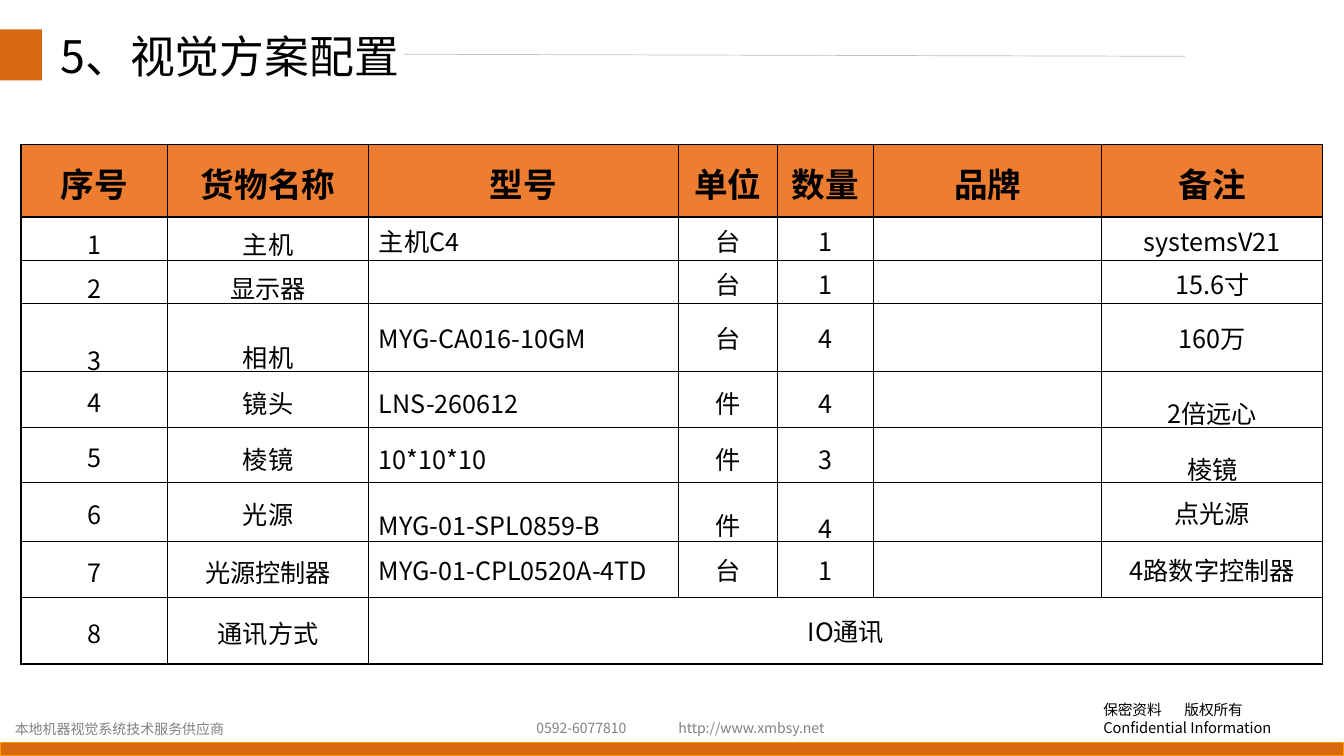
"""Build the vision equipment list slide."""
from lxml import etree
from pptx import Presentation
from pptx.dml.color import RGBColor
from pptx.enum.shapes import MSO_CONNECTOR, MSO_SHAPE
from pptx.enum.text import MSO_ANCHOR, MSO_AUTO_SIZE, PP_ALIGN
from pptx.oxml.ns import qn
from pptx.util import Pt

RECT, LINE = MSO_SHAPE.RECTANGLE, MSO_CONNECTOR.STRAIGHT
LEFT, MID = PP_ALIGN.LEFT, PP_ALIGN.CENTER
TOP, HALF = MSO_ANCHOR.TOP, MSO_ANCHOR.MIDDLE
FIXED = MSO_AUTO_SIZE.NONE
FACE = "Noto Sans CJK SC"


def color(code):
    return RGBColor.from_string(code)


def style(para, size, code, bold=False):
    for run in para.runs:
        font = run.font
        font.size, font.bold, font.name = Pt(size), bold, FACE
        font.color.rgb = color(code)
        east = etree.SubElement(run._r.get_or_add_rPr(), qn("a:ea"))
        east.set("typeface", FACE)


prs = Presentation()
prs.slide_width, prs.slide_height = Pt(960), Pt(540)
slide = prs.slides.add_slide(prs.slide_layouts[5])
shapes = slide.shapes

bars = [(0, 21, 30, 36.5, None), (0, 530.5, 960, 9.5, "FF9900")]
for x, y, w, h, edge in bars:
    bar = shapes.add_shape(RECT, Pt(x), Pt(y), Pt(w), Pt(h))
    bar.shadow.inherit = False
    bar.fill.solid()
    bar.fill.fore_color.rgb = color("D6680F")
    if edge:
        bar.line.color.rgb = color(edge)
        bar.line.width = Pt(1)
    else:
        bar.line.fill.background()

notes = [
    (781, 497, 160, 10.5, "000000", "保密资料\t版权所有\nConfidential Information"),
    (477.5, 510.5, 130, 10, "808080", "http://www.xmbsy.net"),
    (376, 510.5, 90, 10, "808080", "0592-6077810"),
    (3.5, 511, 169, 10, "808080", "本地机器视觉系统技术服务供应商"),
]
for x, y, w, size, code, text in notes:
    lines = text.split("\n")
    box = shapes.add_textbox(Pt(x), Pt(y), Pt(w), Pt(7 + 12.5 * len(lines)))
    frame = box.text_frame
    frame.word_wrap = True
    frame.text = text
    for para in frame.paragraphs:
        if "\t" in para.text:
            tabs = etree.SubElement(para._p.get_or_add_pPr(), qn("a:tabLst"))
            etree.SubElement(tabs, qn("a:tab"), pos=str(Pt(58)), algn="l")
        style(para, size, code)

rule = shapes.add_connector(LINE, Pt(288.5), Pt(38.75), Pt(846.5), Pt(40.25))
rule.line.color.rgb = color("BFBFBF")
rule.line.width = Pt(0.5)
etree.SubElement(rule._element.spPr, qn("a:effectLst"))

title = shapes.title
title.left, title.top, title.width, title.height = Pt(36), Pt(21), Pt(276), Pt(51)
frame = title.text_frame
frame.text = "5、视觉方案配置"
frame.auto_size, frame.vertical_anchor = FIXED, TOP
para = frame.paragraphs[0]
para.alignment, para.line_spacing = LEFT, 0.9
style(para, 32, "000000")

wides = [104.5, 144, 221, 71, 68.5, 163, 158]
highs = [52, 31, 31, 48, 40, 39.5, 42, 40, 47.5]
goods = [
    ["序号", "货物名称", "型号", "单位", "数量", "品牌", "备注"],
    ["1", "主机", "主机C4", "台", "1", "", "systemsV21"],
    ["2", "显示器", "", "台", "1", "", "15.6寸"],
    ["3", "相机", "MYG-CA016-10GM", "台", "4", "", "160万"],
    ["4", "镜头", "LNS-260612", "件", "4", "", "2倍远心"],
    ["5", "棱镜", "10*10*10", "件", "3", "", "棱镜"],
    ["6", "光源", "MYG-01-SPL0859-B", "件", "4", "", "点光源"],
    ["7", "光源控制器", "MYG-01-CPL0520A-4TD", "台", "1", "", "4路数字控制器"],
    ["8", "通讯方式", "IO通讯", "", "", "", ""],
]
plain = [1.1, 1.1, 1, 1, 1, 1, 1]
lens = [1.1, 1.2, 1.2, 1.2, 1.2, 1, 1.5]
gaps = {
    0: [1.2] * 7,
    3: [1.9, 1.8, 1, 1, 1, 1, 1],
    4: lens,
    5: lens,
    6: [1.1, 1.1, 1.5, 1.5, 1.6, 1, 1],
}
grid = shapes.add_table(len(highs), len(wides), Pt(15), Pt(103),
                        Pt(sum(wides)), Pt(sum(highs))).table
for col, wide in zip(grid.columns, wides):
    col.width = Pt(wide)
for row, high in zip(grid.rows, highs):
    row.height = Pt(high)
last = len(goods) - 1
grid.cell(last, 2).merge(grid.cell(last, 6))

for r, items in enumerate(goods):
    head = r == 0
    for c, text in enumerate(items):
        cell = grid.cell(r, c)
        props = cell._tc.get_or_add_tcPr()
        for side in ("lnL", "lnR", "lnT", "lnB"):
            edge = etree.SubElement(props, qn("a:" + side), w=str(Pt(1)))
            paint = etree.SubElement(edge, qn("a:solidFill"))
            etree.SubElement(paint, qn("a:srgbClr"), val="000000")
        cell.fill.solid()
        cell.fill.fore_color.rgb = color("ED7D31" if head else "FFFFFF")
        cell.vertical_anchor = TOP if head else HALF
        if text:
            cell.text_frame.text = text
            para = cell.text_frame.paragraphs[0]
            para.alignment = LEFT if c == 2 and 0 < r < last else MID
            para.line_spacing = float(gaps.get(r, plain)[c])
            style(para, 24 if head else 18, "000000", head)

prs.save("out.pptx")
